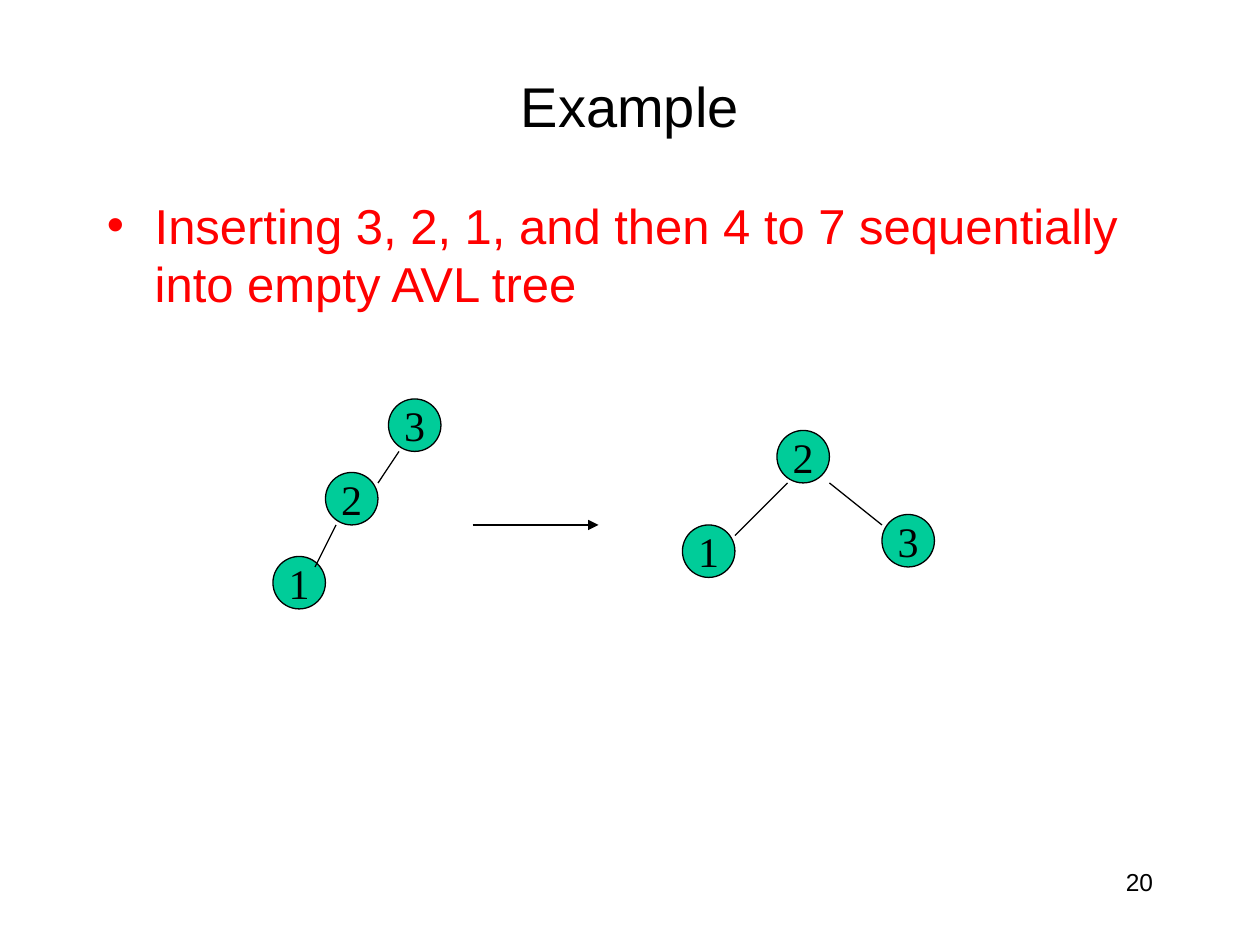
from dataclasses import dataclass

from lxml.etree import SubElement
from pptx import Presentation
from pptx.dml.color import RGBColor
from pptx.enum.shapes import MSO_CONNECTOR as Conn, MSO_SHAPE as Shape
from pptx.enum.text import MSO_ANCHOR as Anchor, PP_ALIGN as Align
from pptx.oxml.ns import qn
from pptx.util import Inches, Pt

BLACK = RGBColor(0x00, 0x00, 0x00)
RED = RGBColor(0xFF, 0x00, 0x00)
GREEN = RGBColor(0x00, 0xCC, 0x99)

WIDTH, HEIGHT = Inches(10), Inches(7.5)
COLS, ROWS = 120, 90
NODE_SIZE = 5


@dataclass(frozen=True)
class Node:
    label: str
    col: int
    row: int


@dataclass(frozen=True)
class Line:
    start: tuple[int, int]
    end: tuple[int, int]
    arrow: bool = False


NODES = [
    Node("3", 37, 38), Node("2", 31, 45), Node("1", 26, 53),
    Node("2", 74, 41), Node("1", 65, 50), Node("3", 84, 49),
]
LINES = [
    Line((38, 43), (36, 46)), Line((32, 50), (30, 54)),
    Line((45, 50), (57, 50), arrow=True),
    Line((75, 46), (70, 51)), Line((79, 46), (84, 50)),
]


def x(col: float) -> int:
    return round(WIDTH * col / COLS)


def y(row: float) -> int:
    return round(HEIGHT * row / ROWS)


def box(col: float, row: float, cols: float, rows: float) -> tuple:
    return x(col), y(row), x(cols), y(rows)


def write(s, text: str, *, size: float, color=BLACK, font="Arial",
          align=Align.LEFT, anchor=Anchor.TOP, wrap=True, bullet=False) -> None:
    tf = s.text_frame
    tf.word_wrap = wrap
    tf.vertical_anchor = anchor
    p = tf.paragraphs[0]
    p.alignment = align
    r = p.add_run()
    r.text = text
    r.font.size = Pt(size)
    r.font.name = font
    r.font.color.rgb = color
    if bullet:
        p.space_before = Pt(size * 0.2)
        pPr = p._p.get_or_add_pPr()
        indent = Inches(0.38)
        pPr.set("marL", str(indent))
        pPr.set("indent", str(-indent))
        SubElement(pPr, qn("a:buFont"), typeface="Arial")
        SubElement(pPr, qn("a:buChar"), char="•")


def draw_node(sp, node: Node) -> None:
    s = sp.add_shape(Shape.OVAL, *box(node.col, node.row, NODE_SIZE, NODE_SIZE))
    s.shadow.inherit = False
    s.fill.solid()
    s.fill.fore_color.rgb = GREEN
    s.line.color.rgb = BLACK
    s.line.width = Pt(0.75)
    write(s, node.label, size=24, font="Times New Roman",
          align=Align.CENTER, anchor=Anchor.MIDDLE, wrap=False)


def draw_line(sp, line: Line) -> None:
    (c1, r1), (c2, r2) = line.start, line.end
    s = sp.add_connector(Conn.STRAIGHT, x(c1), y(r1), x(c2), y(r2))
    s.line.color.rgb = BLACK
    s.line.width = Pt(0.75)
    if line.arrow:
        SubElement(s.line._get_or_add_ln(), qn("a:tailEnd"), type="triangle")
    SubElement(s._element.spPr, qn("a:effectLst"))


def main() -> None:
    prs = Presentation()
    prs.slide_width, prs.slide_height = WIDTH, HEIGHT
    sp = prs.slides.add_slide(prs.slide_layouts[6]).shapes
    write(sp.add_textbox(*box(9, 5, 102, 10)), "Example", size=32,
          align=Align.CENTER, anchor=Anchor.MIDDLE)
    write(sp.add_textbox(*box(9, 18, 102, 13)),
          "Inserting 3, 2, 1, and then 4 to 7 sequentially into empty AVL tree",
          size=28, color=RED, bullet=True)
    write(sp.add_textbox(*box(86, 82, 25, 6)), "20", size=14, align=Align.RIGHT)
    for node in NODES:
        draw_node(sp, node)
    for line in LINES:
        draw_line(sp, line)
    prs.save("out.pptx")


if __name__ == "__main__":
    main()
